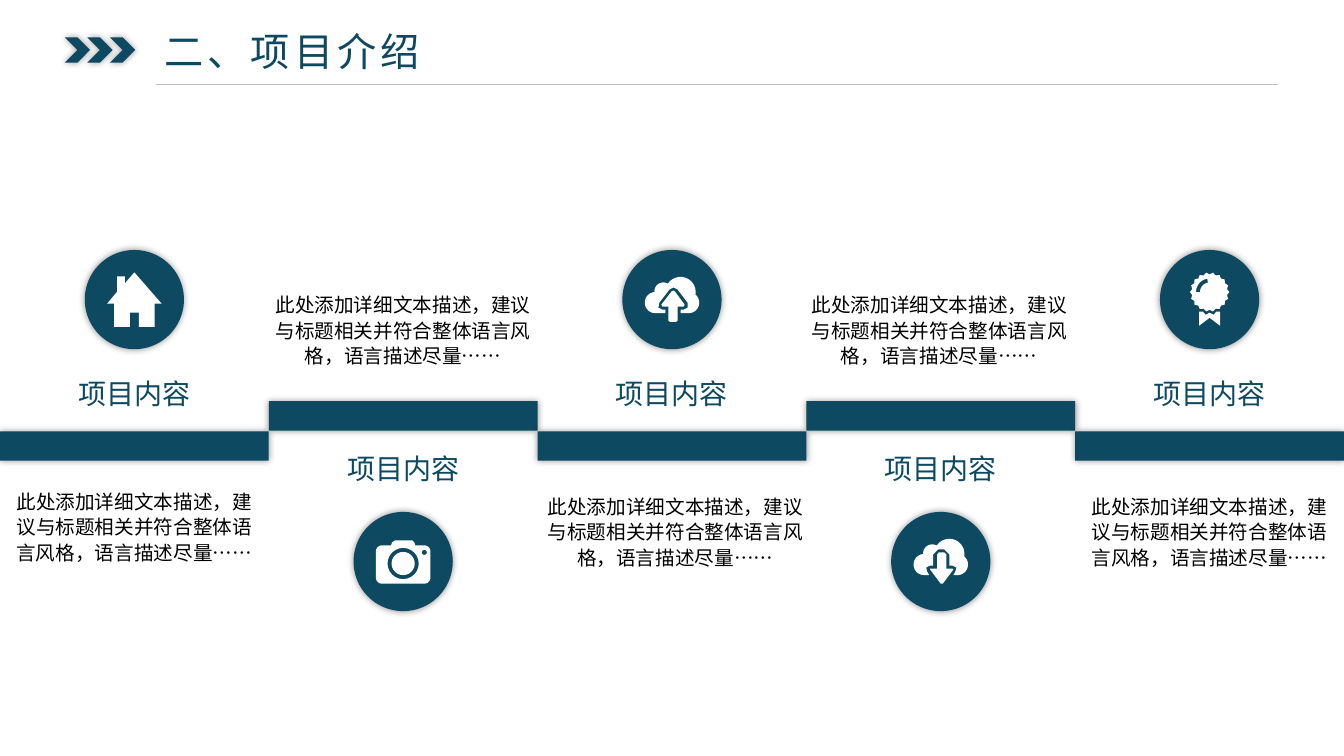
from dataclasses import dataclass
from math import cos, radians, sin

from lxml.etree import SubElement
from pptx import Presentation
from pptx.dml.color import RGBColor
from pptx.enum.shapes import MSO_CONNECTOR, MSO_SHAPE
from pptx.enum.text import MSO_ANCHOR, MSO_AUTO_SIZE, PP_ALIGN
from pptx.oxml.ns import qn
from pptx.shapes.autoshape import Shape
from pptx.slide import Slide
from pptx.text.text import TextFrame
from pptx.util import Cm, Pt

Point = tuple[float, float]
Contour = list[Point]
Icon = list[Contour]


@dataclass(frozen=True)
class Theme:
    accent: RGBColor = RGBColor(0x0D, 0x49, 0x60)
    icon: RGBColor = RGBColor(0xFF, 0xFF, 0xFF)
    body: RGBColor = RGBColor(0x00, 0x00, 0x00)
    rule: RGBColor = RGBColor(0xBF, 0xBF, 0xBF)
    heading_font: str = "Noto Sans CJK JP"
    body_font: str = "Noto Sans CJK SC"
    title_size: Pt = Pt(28)
    label_size: Pt = Pt(20)
    body_size: Pt = Pt(14)


@dataclass(frozen=True)
class Row:
    bar_top: float
    disc_top: float
    label_top: float


@dataclass(frozen=True)
class Item:
    row: Row
    text_left: float
    text_top: float
    text_width: float
    icon: Icon


THEME = Theme()
SLIDE_WIDTH, SLIDE_HEIGHT = 33.87, 19.05
COLUMN_WIDTH = SLIDE_WIDTH / 5
BAR_HEIGHT = 0.74
DISC_SIZE = 2.5
LABEL_WIDTH, LABEL_HEIGHT = 4.09, 1.12
TEXT_HEIGHT = 2.59
ICON_UNIT = Cm(2.54) / 100
LABEL = "项目内容"
DESCRIPTION = "此处添加详细文本描述，建议与标题相关并符合整体语言风格，语言描述尽量……"


def arc(cx: float, cy: float, radius: float, start: float, end: float) -> Contour:
    steps = 24
    angles = [radians(start + (end - start) * i / steps) for i in range(steps + 1)]
    return [(cx + radius * cos(a), cy + radius * sin(a)) for a in angles]


def circle(cx: float, cy: float, radius: float) -> Contour:
    return arc(cx, cy, radius, 0, 360)


def cloud(notch: Contour, arrow: Contour) -> Icon:
    outline = (arc(8.5, -7.5, 15, 10, -150) + arc(-8.5, -8, 9, -60, -180)
               + arc(-16.5, 3, 10.5, -90, -270) + notch
               + arc(16.5, 3, 10.5, 90, -50))
    return [outline, arrow]


def house() -> Icon:
    return [[(27, 4), (20, 4), (20, 27), (4.5, 27), (4.5, 13), (-4.5, 13),
             (-4.5, 27), (-20, 27), (-20, 4), (-27, 4), (-17, -8), (-17, -23),
             (-9.5, -23), (-9.5, -16), (0, -27)]]


def camera() -> Icon:
    body = (arc(-21, -10, 6, 180, 270)
            + [(-12, -16), (-11, -19), (-8, -21), (9, -21), (11, -19), (12, -16)]
            + arc(21, -10, 6, 270, 360) + arc(21, 16, 6, 0, 90)
            + arc(-21, 16, 6, 90, 180))
    return [body, circle(0, 2, 15.5), circle(0, 2, 11.5), circle(21, -9, 2.5)]


def upload() -> Icon:
    notch = [(-6.5, 13.5), (-6.5, 10), (-9.5, 10), (-13.5, 8), (-12.5, 3),
             (-2.5, -10), (1.5, -12), (5.5, -10), (15.5, 3), (15.5, 8),
             (11.5, 10), (8.5, 10), (8.5, 13.5)]
    arrow = [(11.5, 7), (5.5, 7), (5.5, 21), (4, 22), (-2, 22), (-3.5, 21),
             (-3.5, 7), (-9.5, 7), (-10.5, 5), (-0.5, -8), (1.5, -9),
             (3, -8), (12.5, 5)]
    return cloud(notch, arrow)


def download() -> Icon:
    notch = [(-11.5, 13.5), (-13.5, 10), (-14.5, 6), (-10.5, 4), (-7.5, 4),
             (-7.5, -7), (-2.5, -12), (3.5, -12), (8.5, -7), (8.5, 4),
             (11.5, 4), (15.5, 6), (14.5, 10), (12.5, 13.5)]
    arrow = [(12.5, 8), (2, 22), (0, 22), (-10.5, 8), (-10.5, 7), (-3.5, 7),
             (-3.5, -7), (-2, -9), (3.5, -9), (5.5, -7), (5.5, 7), (11.5, 7)]
    return cloud(notch, arrow)


def medal() -> Icon:
    teeth = 18
    seal = [arc(0, -7.5, 17.5 if i % 2 else 19.5, a, a)[0]
            for i, a in enumerate(180 * n / teeth for n in range(2 * teeth))]
    shine = arc(0, -7.5, 13.5, 180, 260) + arc(0, -7.5, 9.5, 260, 180)
    ribbon = [(-10.5, 12), (-6.5, 12), (-4, 15), (0, 13), (4, 15), (6.5, 12),
              (10.5, 12), (10.5, 26), (0, 18), (-10.5, 26)]
    return [seal, shine, ribbon]


def add_shadow(sp: Shape) -> None:
    effects = SubElement(sp.element.spPr, qn("a:effectLst"))
    shadow = SubElement(effects, qn("a:outerShdw"), blurRad=str(Pt(5)),
                        dist="0", dir="0", algn="ctr", rotWithShape="0")
    color = SubElement(shadow, qn("a:srgbClr"), val="000000")
    SubElement(color, qn("a:alpha"), val="40000")


def add_accent(s: Slide, kind: MSO_SHAPE, left: float, top: float,
               width: float, height: float) -> None:
    sp = s.shapes.add_shape(kind, Cm(left), Cm(top), Cm(width), Cm(height))
    sp.fill.solid()
    sp.fill.fore_color.rgb = THEME.accent
    sp.line.fill.background()
    add_shadow(sp)


def add_icon(s: Slide, icon: Icon, cx: float, cy: float) -> None:
    contours = [[(x * ICON_UNIT, y * ICON_UNIT) for x, y in c] for c in icon]
    builder = s.shapes.build_freeform(*contours[0][0], scale=1.0)
    for i, contour in enumerate(contours):
        if i:
            builder.move_to(*contour[0])
        builder.add_line_segments(contour[1:], close=True)
    sp = builder.convert_to_shape(Cm(cx), Cm(cy))
    sp.fill.solid()
    sp.fill.fore_color.rgb = THEME.icon
    sp.line.fill.background()
    sp.shadow.inherit = False


def write(tf: TextFrame, text: str, font: str, size: Pt, color: RGBColor,
          align: PP_ALIGN, inset: float, spacing: float = 1.0,
          tracking: int = 0) -> None:
    tf.text = text
    tf.word_wrap = True
    tf.auto_size = MSO_AUTO_SIZE.NONE
    tf.vertical_anchor = MSO_ANCHOR.MIDDLE
    tf.margin_left = tf.margin_right = Cm(inset)
    tf.margin_top = tf.margin_bottom = Cm(0.1)
    p = tf.paragraphs[0]
    p.alignment = align
    p.line_spacing = spacing
    r = p.runs[0]
    r.font.name = font
    r.font.size = size
    r.font.color.rgb = color
    rPr = r.font._element
    SubElement(rPr, qn("a:ea"), typeface=font)
    if tracking:
        rPr.set("spc", str(tracking))


def add_header(s: Slide) -> None:
    for i in range(3):
        add_accent(s, MSO_SHAPE.CHEVRON, 1.63 + 0.57 * i, 0.94, 0.64, 0.64)
    title = s.shapes.title
    title.left, title.top, title.width, title.height = map(Cm, (3.94, 0.58, 14.73, 1.4))
    write(title.text_frame, "二、项目介绍", THEME.heading_font, THEME.title_size,
          THEME.accent, PP_ALIGN.LEFT, 0.2, tracking=300)
    rule = s.shapes.add_connector(MSO_CONNECTOR.STRAIGHT, Cm(3.94), Cm(2.12),
                                  Cm(32.21), Cm(2.12))
    rule.line.color.rgb = THEME.rule
    rule.line.width = Pt(0.5)
    SubElement(rule._element.spPr, qn("a:effectLst"))


def add_item(s: Slide, index: int, item: Item) -> None:
    left = COLUMN_WIDTH * index
    center = left + COLUMN_WIDTH / 2
    row = item.row
    add_accent(s, MSO_SHAPE.RECTANGLE, left, row.bar_top, COLUMN_WIDTH, BAR_HEIGHT)
    add_accent(s, MSO_SHAPE.OVAL, center - DISC_SIZE / 2, row.disc_top,
               DISC_SIZE, DISC_SIZE)
    add_icon(s, item.icon, center, row.disc_top + DISC_SIZE / 2)
    label = s.shapes.add_textbox(Cm(center - LABEL_WIDTH / 2), Cm(row.label_top),
                                 Cm(LABEL_WIDTH), Cm(LABEL_HEIGHT))
    write(label.text_frame, LABEL, THEME.heading_font, THEME.label_size,
          THEME.accent, PP_ALIGN.CENTER, 0.25)
    text = s.shapes.add_textbox(Cm(item.text_left), Cm(item.text_top),
                                Cm(item.text_width), Cm(TEXT_HEIGHT))
    write(text.text_frame, DESCRIPTION, THEME.body_font, THEME.body_size,
          THEME.body, PP_ALIGN.CENTER, 0, spacing=1.08)


def main() -> None:
    prs = Presentation()
    prs.slide_width, prs.slide_height = Cm(SLIDE_WIDTH), Cm(SLIDE_HEIGHT)
    s = prs.slides.add_slide(prs.slide_layouts[5])
    add_header(s)
    low = Row(bar_top=10.87, disc_top=6.3, label_top=9.35)
    high = Row(bar_top=10.11, disc_top=12.9, label_top=11.23)
    items = [
        Item(low, 0.41, 11.96, 5.95, house()),
        Item(high, 6.86, 7.01, 6.6, camera()),
        Item(low, 13.72, 12.09, 6.6, upload()),
        Item(high, 20.37, 7.01, 6.6, download()),
        Item(low, 27.38, 12.09, 6.2, medal()),
    ]
    for index, item in enumerate(items):
        add_item(s, index, item)
    prs.save("out.pptx")


if __name__ == "__main__":
    main()
